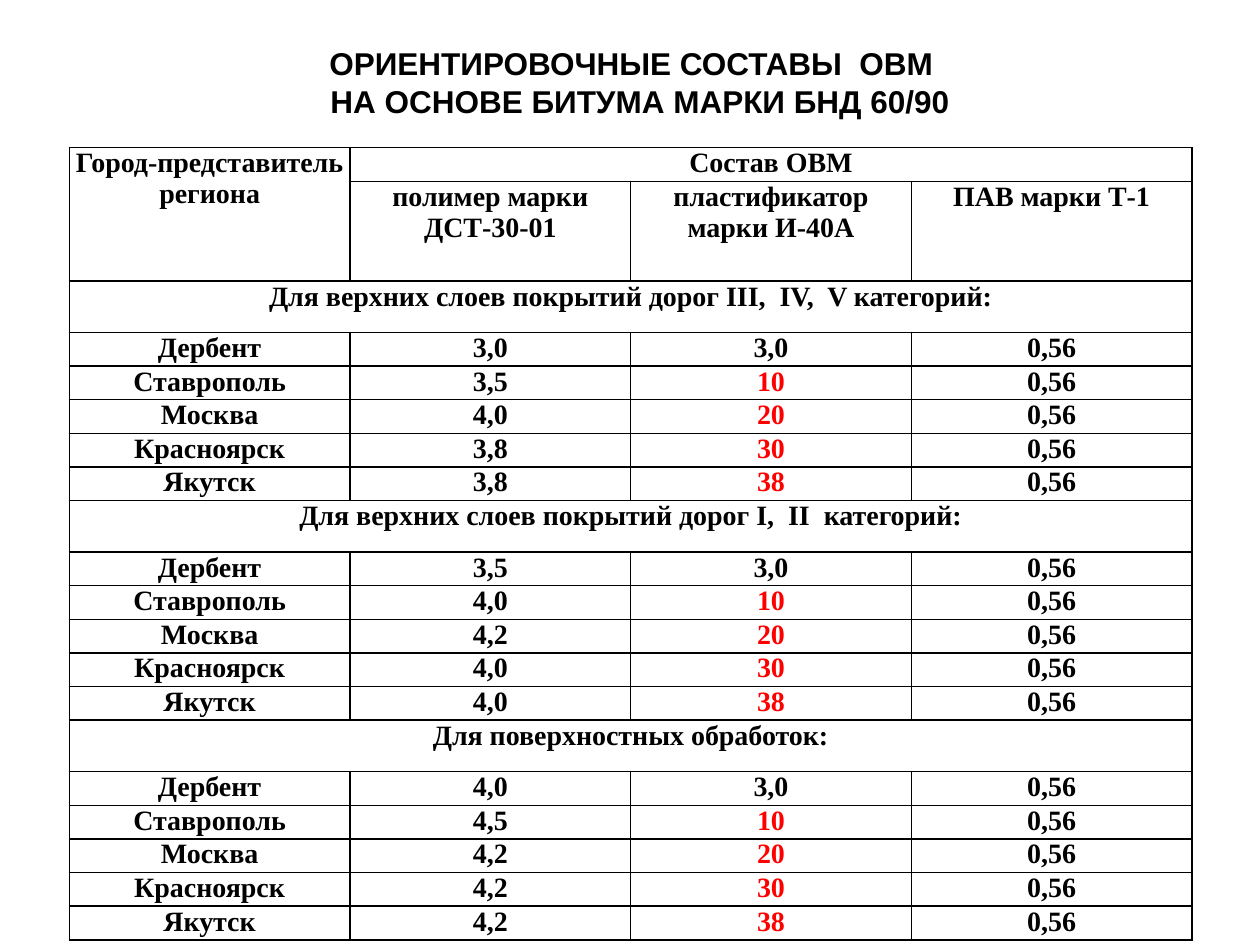
from pptx import Presentation, util as u
from pptx.dml.color import RGBColor
from pptx.enum import text
from pptx.oxml import parse_xml
from pptx.oxml.ns import nsdecls

Pt = u.Pt
BLACK = RGBColor(0x00, 0x00, 0x00)
RED = RGBColor(0xFF, 0x00, 0x00)

CITIES = ["Дербент", "Ставрополь", "Москва", "Красноярск", "Якутск"]
PLASTICIZER = ["3,0", "10", "20", "30", "38"]
SURFACTANT = "0,56"
SECTIONS = [
    ("Для верхних слоев покрытий дорог III,  IV,  V категорий:",
     ["3,0", "3,5", "4,0", "3,8", "3,8"]),
    ("Для верхних слоев покрытий дорог I,  II  категорий:",
     ["3,5", "4,0", "4,2", "4,0", "4,0"]),
    ("Для поверхностных обработок:",
     ["4,0", "4,5", "4,2", "4,2", "4,2"]),
]
ROW_H, HEADER_H, SECTION_H, COL_W = 19.2, 57, 29.4, 160.4


class Deck:
    title_font, title_size = "Arial", 18
    cell_font, cell_size = "Times New Roman", 16

    def __init__(self, prs):
        self.s = prs.slides.add_slide(prs.slide_layouts[5])

    def run(self, p, words, font, size, color=BLACK):
        p.alignment = text.PP_ALIGN.CENTER
        r = p.add_run()
        r.text = words
        r.font.name = font
        r.font.size = Pt(size)
        r.font.bold = True
        r.font.color.rgb = color

    def title(self, lines, x, y, w, h, top):
        sp = self.s.shapes.title
        sp.left, sp.top, sp.width, sp.height = Pt(x), Pt(y), Pt(w), Pt(h)
        tf = sp.text_frame
        tf.word_wrap = True
        tf.auto_size = text.MSO_AUTO_SIZE.SHAPE_TO_FIT_TEXT
        tf.vertical_anchor = text.MSO_ANCHOR.MIDDLE
        tf.margin_top = Pt(top)
        for i, line in enumerate(lines):
            p = tf.add_paragraph() if i else tf.paragraphs[0]
            self.run(p, line, self.title_font, self.title_size)

    def table(self, x, y, col_w, cols, heights):
        frame = self.s.shapes.add_table(
            len(heights), cols, Pt(x), Pt(y), Pt(col_w * cols), Pt(sum(heights)))
        table = frame.table
        table.first_row = table.horz_banding = False
        for col in table.columns:
            col.width = Pt(col_w)
        for row, height in zip(table.rows, heights):
            row.height = Pt(height)
            for cell in row.cells:
                self.frame_cell(cell)
        return table

    def frame_cell(self, cell):
        cell.margin_left = cell.margin_right = Pt(3.6)
        cell.margin_top = cell.margin_bottom = 0
        cell.text_frame.paragraphs[0].font.size = Pt(self.cell_size)
        tc_pr = cell._tc.get_or_add_tcPr()
        for side in ("lnL", "lnR", "lnT", "lnB"):
            tc_pr.append(parse_xml(
                f'<a:{side} {nsdecls("a")} w="{Pt(1)}"><a:solidFill>'
                f'<a:srgbClr val="{BLACK}"/></a:solidFill></a:{side}>'))
        cell.fill.background()

    def cell(self, table, row, col, words, color=BLACK, rows=1, cols=1):
        cell = table.cell(row, col)
        if rows * cols > 1:
            cell.merge(table.cell(row + rows - 1, col + cols - 1))
        p = cell.text_frame.paragraphs[0]
        self.run(p, words, self.cell_font, self.cell_size, color)


def main():
    prs = Presentation()
    prs.slide_width, prs.slide_height = Pt(720), Pt(540)
    deck = Deck(prs)
    deck.title(["ОРИЕНТИРОВОЧНЫЕ СОСТАВЫ  ОВМ  ",
                "НА ОСНОВЕ БИТУМА МАРКИ БНД 60/90"], 0, 0, 731.5, 72.7, 24.3)

    section_heights = [SECTION_H] + [ROW_H] * len(CITIES)
    heights = [ROW_H, HEADER_H] + section_heights * len(SECTIONS)
    table = deck.table(39.6, 84.4, COL_W, 4, heights)
    deck.cell(table, 0, 0, "Город-представитель региона", rows=2)
    deck.cell(table, 0, 1, "Состав ОВМ", cols=3)
    headers = ["полимер марки ДСТ-30-01", "пластификатор марки И-40А",
               "ПАВ марки Т-1"]
    for col, words in enumerate(headers, 1):
        deck.cell(table, 1, col, words)

    for n, (heading, polymer) in enumerate(SECTIONS):
        top = 2 + n * len(section_heights)
        deck.cell(table, top, 0, heading, cols=4)
        for i, (city, share, oil) in enumerate(zip(CITIES, polymer, PLASTICIZER)):
            row = top + 1 + i
            deck.cell(table, row, 0, city)
            deck.cell(table, row, 1, share)
            deck.cell(table, row, 2, oil, RED if i else BLACK)
            deck.cell(table, row, 3, SURFACTANT)

    prs.save("out.pptx")


if __name__ == "__main__":
    main()
